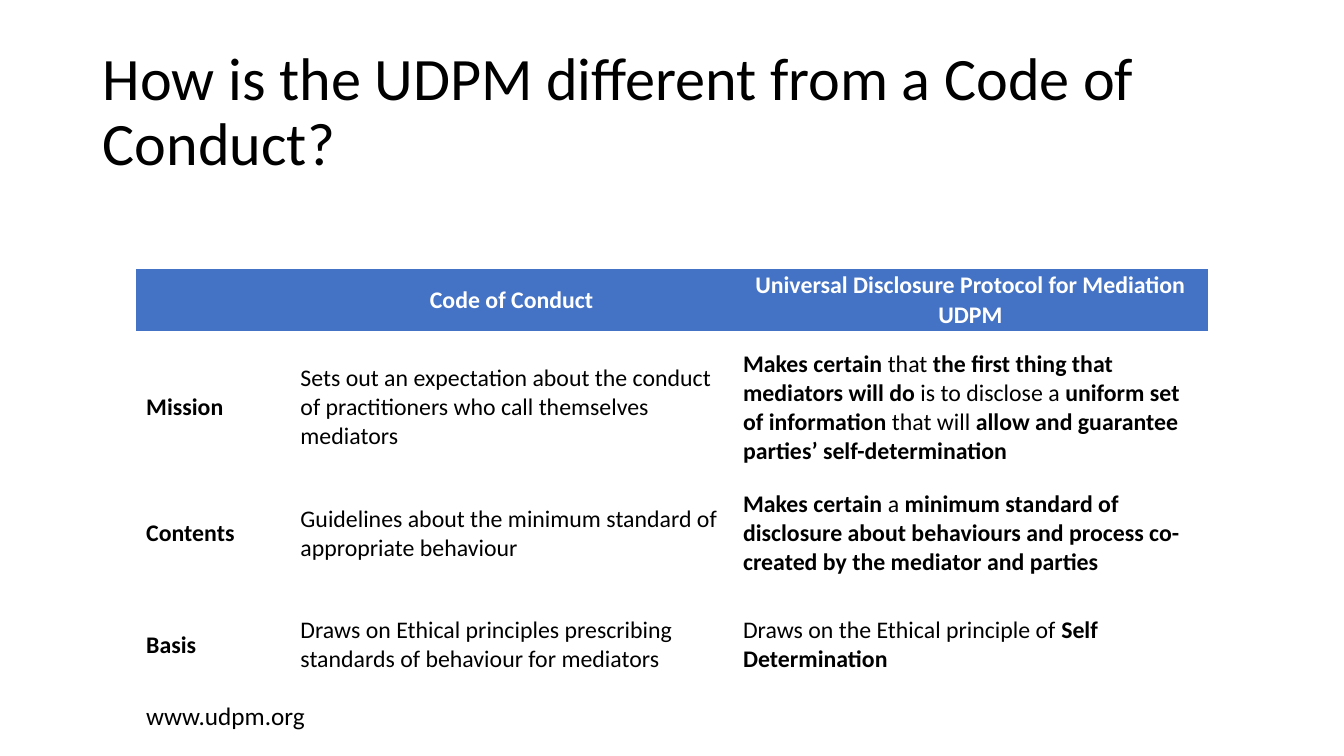
from pptx import Presentation
from pptx.dml.color import RGBColor
from pptx.enum.text import MSO_ANCHOR, MSO_AUTO_SIZE, PP_ALIGN
from pptx.util import Pt

PX = 9144  # 100 px to the inch
MID = MSO_ANCHOR.MIDDLE
LEFT, CENTER = PP_ALIGN.LEFT, PP_ALIGN.CENTER
FIXED, GROW = MSO_AUTO_SIZE.NONE, MSO_AUTO_SIZE.SHAPE_TO_FIT_TEXT
FONT, BLACK, WHITE, BLUE = "Calibri", "000000", "FFFFFF", "4472C4"
NO_STYLE = "{2D5ABB26-0587-4C30-8999-92F81FD0307C}"

COLS = [153, 439, 471]
ROWS = [61, 153, 96, 125]
HEADS = [
    [],
    ["Code of Conduct"],
    ["Universal Disclosure Protocol for Mediation", "UDPM"],
]
# Each row: label, plain text, then runs of (text, bold)
BODY = [
    ("Mission",
     "Sets out an expectation about the conduct of practitioners "
     "who call themselves mediators",
     [("Makes certain ", True), ("that ", False),
      ("the first thing that mediators will do ", True),
      ("is to disclose a ", False),
      ("uniform set of information ", True), ("that will ", False),
      ("allow and guarantee parties’ self-determination", True)]),
    ("Contents",
     "Guidelines about the minimum standard of appropriate behaviour",
     [("Makes certain ", True), ("a ", False),
      ("minimum standard of disclosure about behaviours and process "
       "co-created by the mediator and parties", True)]),
    ("Basis",
     "Draws on Ethical principles prescribing standards of behaviour "
     "for mediators",
     [("Draws on the Ethical principle of ", False),
      ("Self Determination", True)]),
]


def px(*vals):
    return [v * PX for v in vals]


def color(code):
    return RGBColor.from_string(code)


def write(para, runs, size, ink=BLACK, align=LEFT):
    """Add (text, bold) runs to a paragraph."""
    para.alignment = align
    for text, bold in runs:
        run = para.add_run()
        run.text = text
        font = run.font
        font.name, font.size, font.bold = FONT, Pt(size), bold
        font.color.rgb = color(ink)


def pad(cell, x, top, foot):
    cell.margin_left = cell.margin_right = x * PX
    cell.margin_top, cell.margin_bottom = px(top, foot)


def add_title(slide, box, text):
    title = slide.shapes.title
    title.left, title.top, title.width, title.height = px(*box)
    frame = title.text_frame
    frame.word_wrap = True
    frame.auto_size = FIXED
    frame.vertical_anchor = MID
    para = frame.paragraphs[0]
    para.line_spacing = 0.9
    write(para, [(text, False)], 43)


def fill_head(cell, lines):
    cell.fill.solid()
    cell.fill.fore_color.rgb = color(BLUE)
    pad(cell, 1, 1, 0)
    frame = cell.text_frame
    for i, line in enumerate(lines):
        para = frame.add_paragraph() if i else frame.paragraphs[0]
        write(para, [(line, True)], 17, WHITE, CENTER)


def fill_body(cell, runs):
    cell.fill.background()
    pad(cell, 10, 5, 5)
    write(cell.text_frame.paragraphs[0], runs, 17)


def add_grid(slide, left, top):
    box = px(left, top, sum(COLS), sum(ROWS))
    table = slide.shapes.add_table(len(ROWS), len(COLS), *box).table
    table._tbl.tblPr.find("{*}tableStyleId").text = NO_STYLE
    table.horz_banding = False
    for col, width in zip(table.columns, COLS):
        col.width = width * PX
    for row, height in zip(table.rows, ROWS):
        row.height = height * PX
    for cell in table.iter_cells():
        cell.vertical_anchor = MID
    for c, lines in enumerate(HEADS):
        fill_head(table.cell(0, c), lines)
    for r, (label, plain, runs) in enumerate(BODY, 1):
        parts = [[(label, True)], [(plain, False)], runs]
        for c, part in enumerate(parts):
            fill_body(table.cell(r, c), part)


def add_site(slide, box, text):
    frame = slide.shapes.add_textbox(*px(*box)).text_frame
    frame.word_wrap = False
    frame.auto_size = GROW
    write(frame.paragraphs[0], [(text, False)], 18)


def main():
    deck = Presentation()
    deck.slide_width, deck.slide_height = px(1333, 750)
    slide = deck.slides.add_slide(deck.slide_layouts.get_by_name("Title Only"))
    add_title(slide, (92, 40, 1150, 145),
              "How is the UDPM different from a Code of Conduct?")
    add_grid(slide, 135, 267)
    add_site(slide, (135, 690, 179, 40), "www.udpm.org")
    deck.save("out.pptx")


if __name__ == "__main__":
    main()
